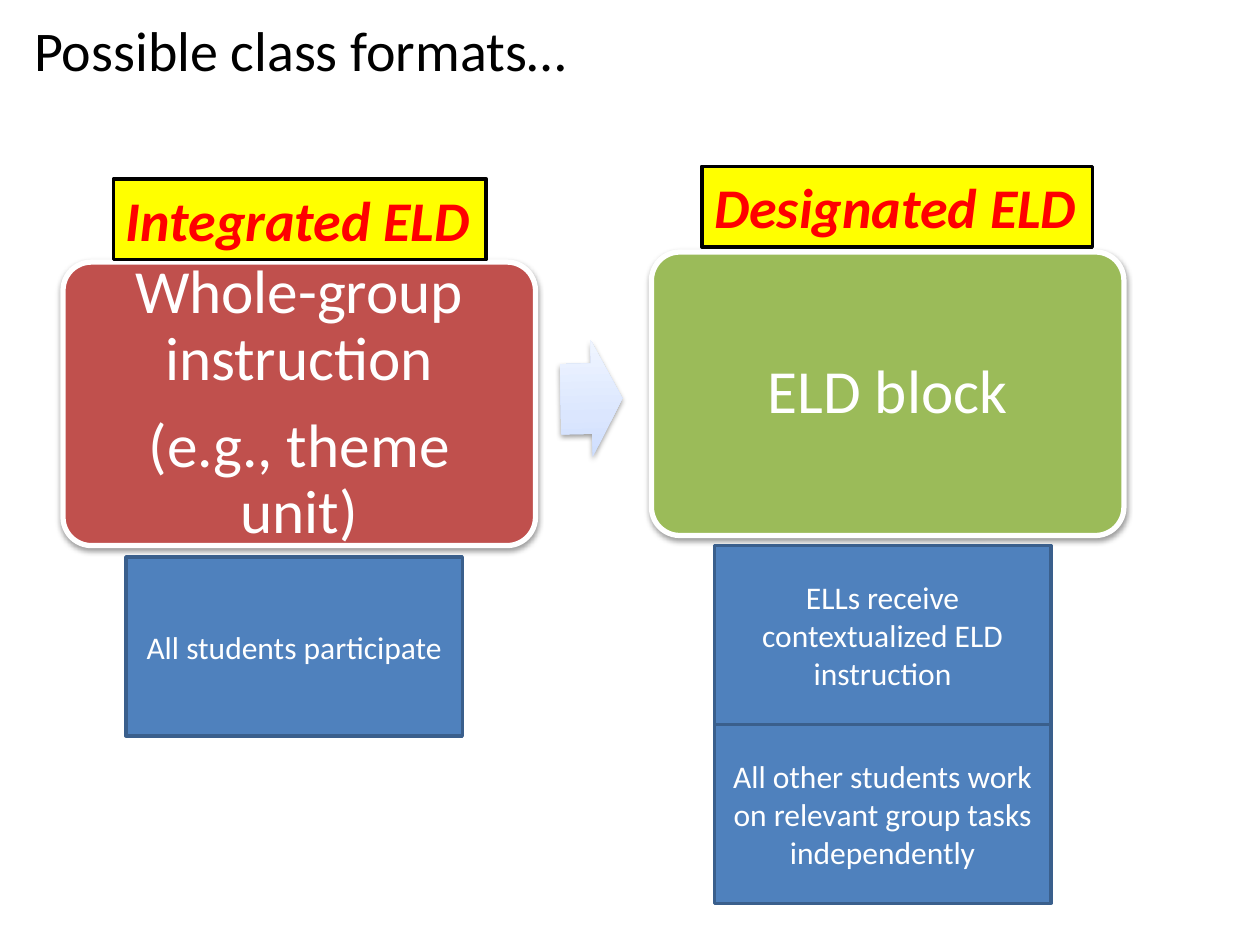
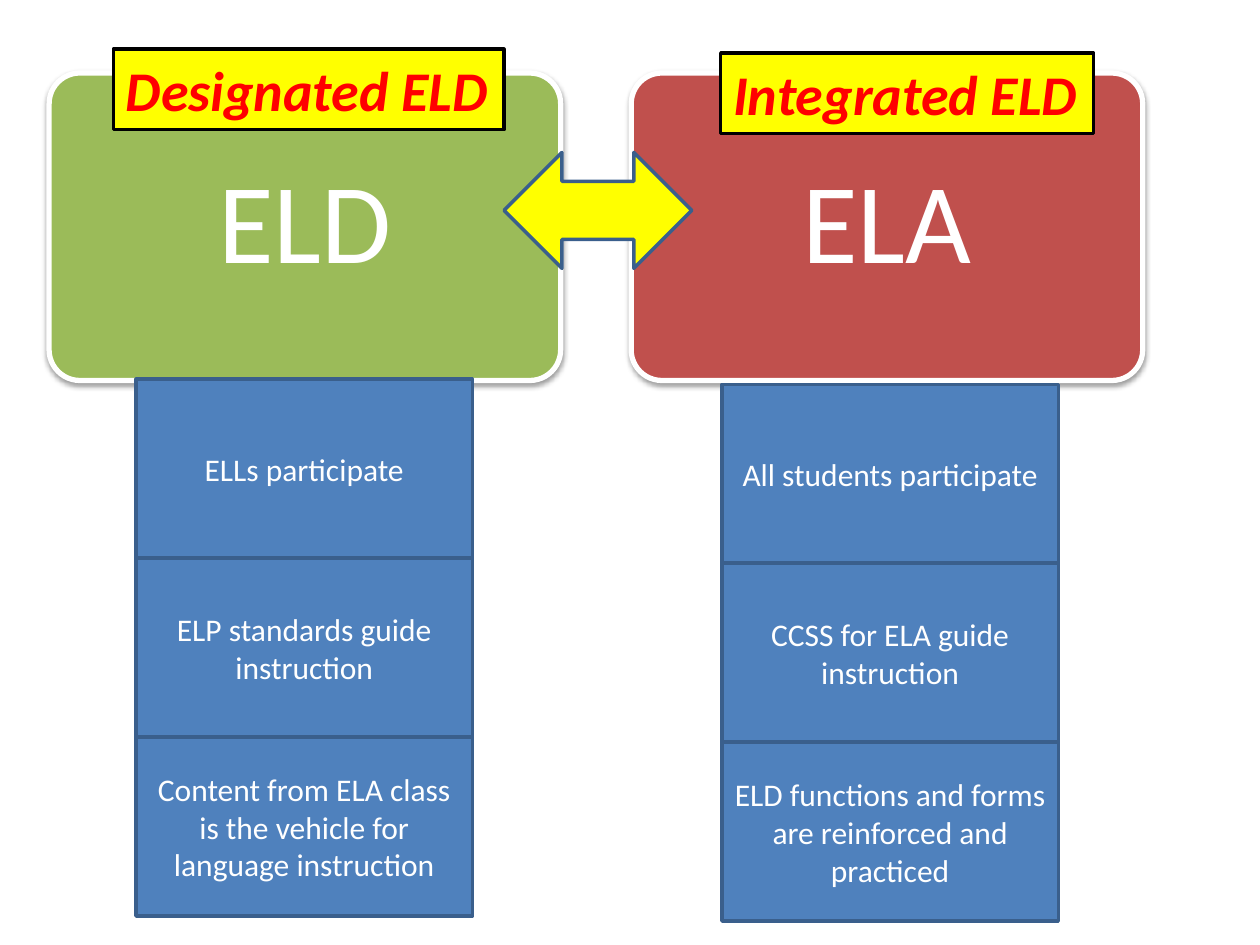
"""Build two slides comparing integrated and designated ELD class formats."""
import copy
import pptx
import pptx.util
import pptx.dml.color
import pptx.enum.shapes
import pptx.enum.text
import pptx.oxml
import pptx.oxml.ns

SHAPE = pptx.enum.shapes.MSO_SHAPE
ALIGN = pptx.enum.text.PP_ALIGN
ANCHOR = pptx.enum.text.MSO_ANCHOR
FONT = "Calibri"
RED, GREEN, BLUE, EDGE = "C0504D", "9BBB59", "4F81BD", "3A5F8C"
YELLOW, LABEL_RED, WHITE, BLACK = "FFFF00", "FF0000", "FFFFFF", "000000"
ARROW_STOPS = [(0, "CDDDFE"), (0.35, "DBE6FE"), (1, "F0F5FF")]
KINDS = {"Integrated ELD": (RED, 2.96), "Designated ELD": (GREEN, 3.1)}
LABEL_H, TASK_W, TASK_H = 0.64, 2.67, 1.42

FORMATS = {
    "title": "Possible class formats…",
    "card": (3.75, 2.25), "size": 35, "inset": 0.15,
    "columns": [
        {"kind": "Integrated ELD", "label": (0.9, 1.42), "card": (0.5, 2.08),
         "lines": ["Whole-group instruction", "(e.g., theme unit)"],
         "stack": (1, 4.42), "tasks": ["All students participate"]},
        {"kind": "Designated ELD", "label": (5.57, 1.32), "card": (5.17, 2),
         "lines": ["ELD block"], "stack": (5.67, 4.33),
         "tasks": ["ELLs receive contextualized ELD instruction",
                   "All other students work on relevant group tasks independently"]},
    ],
}
PAIRING = {
    "card": (4.06, 2.44), "size": 65, "inset": 0.27,
    "columns": [
        {"kind": "Designated ELD", "label": (0.9, 0.39), "card": (0.39, 0.58),
         "lines": ["ELD"], "stack": (1.08, 3.01),
         "tasks": ["ELLs participate", "ELP standards guide instruction",
                   "Content from ELA class is the vehicle for language instruction"]},
        {"kind": "Integrated ELD", "label": (5.72, 0.42), "card": (5.01, 0.58),
         "lines": ["ELA"], "stack": (5.73, 3.05),
         "tasks": ["All students participate", "CCSS for ELA guide instruction",
                   "ELD functions and forms are reinforced and practiced"]},
    ],
}


def rgb(value):
    return pptx.dml.color.RGBColor.from_string(value)


def inches(*values):
    return [pptx.util.Inches(v) for v in values]


def add_box(s, shape, left, top, width, height, fill=None, line=None, weight=2):
    sp = s.shapes.add_shape(shape, *inches(left, top, width, height))
    sp.shadow.inherit = False
    if fill:
        sp.fill.solid()
        sp.fill.fore_color.rgb = rgb(fill)
    if line:
        sp.line.color.rgb = rgb(line)
        sp.line.width = pptx.util.Pt(weight)
    else:
        sp.line.fill.background()
    return sp


def write(sp, lines, size, color, align=ALIGN.CENTER, strong=False):
    tf = sp.text_frame
    tf.text = "\n".join(lines)
    tf.word_wrap = True
    tf.vertical_anchor = ANCHOR.MIDDLE
    for p in tf.paragraphs:
        p.alignment = align
        for r in p.runs:
            r.font.name, r.font.size = FONT, pptx.util.Pt(size)
            r.font.color.rgb = rgb(color)
            r.font.bold = r.font.italic = strong
    return tf


def cast_shadow(sp):
    effects = sp._element.spPr.find(pptx.oxml.ns.qn("a:effectLst"))
    effects.append(pptx.oxml.parse_xml(
        f'<a:outerShdw {pptx.oxml.ns.nsdecls("a")} blurRad="40000" dist="20000" '
        'dir="5400000" rotWithShape="0"><a:srgbClr val="000000">'
        '<a:alpha val="38000"/></a:srgbClr></a:outerShdw>'))


def add_card(s, data, column):
    fill, _ = KINDS[column["kind"]]
    sp = add_box(s, SHAPE.ROUNDED_RECTANGLE, *column["card"], *data["card"], fill, WHITE, 3)
    sp.adjustments[0] = 0.1
    cast_shadow(sp)
    tf = write(sp, column["lines"], data["size"], WHITE)
    inset = pptx.util.Inches(data["inset"])
    tf.margin_left = tf.margin_right = tf.margin_top = tf.margin_bottom = inset
    for p in tf.paragraphs:
        p.line_spacing = 0.9
        p.space_after = pptx.util.Pt(round(0.35 * data["size"]))


def add_tasks(s, column):
    left, top = column["stack"]
    for i, task in enumerate(column["tasks"]):
        sp = add_box(s, SHAPE.RECTANGLE, left, top + i * TASK_H, TASK_W, TASK_H, BLUE, EDGE)
        write(sp, [task], 18, WHITE)


def add_label(s, column):
    _, width = KINDS[column["kind"]]
    sp = add_box(s, SHAPE.RECTANGLE, *column["label"], width, LABEL_H, YELLOW, BLACK)
    tf = write(sp, [column["kind"]], 32, LABEL_RED, ALIGN.LEFT, True)
    tf.word_wrap = False
    tf.vertical_anchor = ANCHOR.TOP
    tf.auto_size = pptx.enum.text.MSO_AUTO_SIZE.SHAPE_TO_FIT_TEXT


def add_next_arrow(s):
    sp = add_box(s, SHAPE.RIGHT_ARROW, 4.45, 2.7, 0.49, 0.93)
    sp.rotation = 359
    sp.adjustments[0], sp.adjustments[1] = 0.6, 0.5
    sp.fill.gradient()
    sp.fill.gradient_angle = 90
    stops = sp._element.spPr.find(".//" + pptx.oxml.ns.qn("a:gsLst"))
    stops.append(copy.deepcopy(stops[-1]))
    for stop, (position, color) in zip(sp.fill.gradient_stops, ARROW_STOPS):
        stop.position = position
        stop.color.rgb = rgb(color)
    cast_shadow(sp)


def add_both_ways_arrow(s):
    add_box(s, SHAPE.LEFT_RIGHT_ARROW, 4, 1.21, 1.49, 0.92, YELLOW, EDGE)


def add_slide(prs, data, add_arrow):
    s = prs.slides.add_slide(prs.slide_layouts[5 if "title" in data else 6])
    if "title" in data:
        title = s.shapes.title
        title.left, title.top, title.width, title.height = inches(0.17, 0, 8.58, 0.78)
        write(title, [data["title"]], 32, BLACK, ALIGN.LEFT)
    for column in data["columns"]:
        add_card(s, data, column)
        add_tasks(s, column)
    add_arrow(s)
    for column in data["columns"]:
        add_label(s, column)


def main():
    prs = pptx.Presentation()
    prs.slide_width, prs.slide_height = inches(10, 7.5)
    add_slide(prs, FORMATS, add_next_arrow)
    add_slide(prs, PAIRING, add_both_ways_arrow)
    prs.save("out.pptx")


if __name__ == "__main__":
    main()
